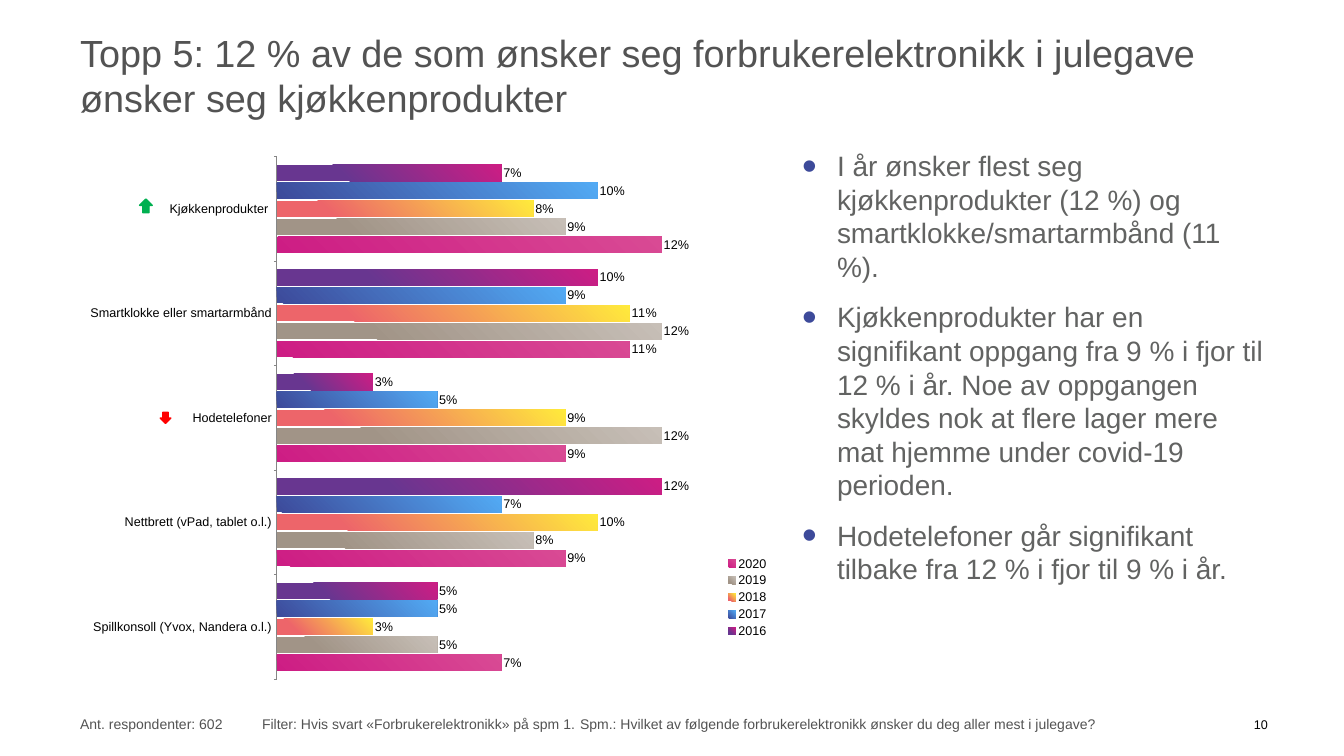
from lxml import etree
from pptx import Presentation
from pptx.chart.data import CategoryChartData
from pptx.dml.color import RGBColor
from pptx.enum.chart import XL_CHART_TYPE as ChartType, XL_LABEL_POSITION as LabelPosition
from pptx.enum.chart import XL_LEGEND_POSITION as LegendPosition, XL_TICK_MARK as TickMark
from pptx.enum.shapes import MSO_SHAPE as Preset
from pptx.enum.text import MSO_ANCHOR as Anchor, PP_ALIGN as Align
from pptx.oxml import parse_xml
from pptx.oxml.ns import nsdecls, qn
from pptx.util import Inches, Pt

GREY, BODY_GREY, BLACK, BLUE = "535353", "626362", "000000", "3D4A9A"
TITLE = ("Topp 5: 12 % av de som ønsker seg forbrukerelektronikk i julegave "
         "ønsker seg kjøkkenprodukter")
POINTS = [
    "I år ønsker flest seg kjøkkenprodukter (12 %) og smartklokke/smartarmbånd (11 %).",
    "Kjøkkenprodukter har en signifikant oppgang fra 9 % i fjor til 12 % i år. Noe av "
    "oppgangen skyldes nok at flere lager mere mat hjemme under covid-19 perioden.",
    "Hodetelefoner går signifikant tilbake fra 12 % i fjor til 9 % i år.",
]
FOOTER = ("Ant. respondenter: 602\tFilter: Hvis svart «Forbrukerelektronikk» på spm 1.\t"
          "Spm.: Hvilket av følgende forbrukerelektronikk ønsker du deg aller mest i julegave?")
CATEGORIES = ["Kjøkkenprodukter ", "Smartklokke eller smartarmbånd", "Hodetelefoner",
              "Nettbrett (vPad, tablet o.l.)", "Spillkonsoll (Yvox, Nandera o.l.)"]
SERIES = {
    "2016": ((0.07, 0.10, 0.03, 0.12, 0.05), ((0, "CD1D84"), (70, "683690"), (100, "683690"))),
    "2017": ((0.10, 0.09, 0.05, 0.07, 0.05), ((0, "52AAF4"), (100, "3D4A9A"))),
    "2018": ((0.08, 0.11, 0.09, 0.10, 0.03), ((0, "FFEA3C"), (79, "ED656A"), (100, "ED656A"))),
    "2019": ((0.09, 0.12, 0.12, 0.08, 0.05), ((0, "C7BFB7"), (75, "A19487"), (100, "A19487"))),
    "2020": ((0.12, 0.11, 0.09, 0.09, 0.07), ((0, "D94A94"), (100, "CD1D84"))),
}


def color(value):
    return RGBColor.from_string(value)


def set_font(font, size, value, name="Arial"):
    for key, setting in {"size": Pt(size), "name": name, "bold": False}.items():
        setattr(font, key, setting)
    font.color.rgb = color(value)


def set_frame(frame, anchor=Anchor.TOP):
    inset = Inches(0.06)
    settings = {"margin_left": inset, "margin_top": inset, "margin_right": inset,
                "margin_bottom": inset, "vertical_anchor": anchor, "word_wrap": True}
    for key, setting in settings.items():
        setattr(frame, key, setting)


def add_box(page, box, anchor=Anchor.TOP):
    frame = page.shapes.add_textbox(*map(Inches, box)).text_frame
    set_frame(frame, anchor)
    return frame


def add_title(page, box):
    title = page.shapes.title
    for key, length in zip(("left", "top", "width", "height"), box):
        setattr(title, key, Inches(length))
    set_frame(title.text_frame, Anchor.MIDDLE)
    para = title.text_frame.paragraphs[0]
    para.text = TITLE
    para.alignment = Align.LEFT
    para.line_spacing = 1.0
    set_font(para.font, 54, GREY)


def add_bullet(para):
    props = para._p.get_or_add_pPr()
    props.set("marL", str(Inches(0.69)))
    props.set("indent", str(-Inches(0.69)))
    bullet_color = etree.SubElement(props, qn("a:buClr"))
    etree.SubElement(bullet_color, qn("a:srgbClr"), val=BLUE)
    etree.SubElement(props, qn("a:buSzPct"), val="150000")
    etree.SubElement(props, qn("a:buFont"), typeface="Arial")
    etree.SubElement(props, qn("a:buChar"), char="•")


def add_points(page, box):
    frame = add_box(page, box)
    for index, text in enumerate(POINTS):
        para = frame.add_paragraph() if index else frame.paragraphs[0]
        para.text = text
        add_bullet(para)
        para.line_spacing = 1.0
        para.space_before = Pt(18 if index else 0)
        para.space_after = Pt(6)
        set_font(para.font, 40, BODY_GREY)


def set_gradient(series, stops):
    marks = "".join(f'<a:gs pos="{position * 1000}"><a:srgbClr val="{value}"/></a:gs>'
                    for position, value in stops)
    series.format.fill.solid()
    props = series.format.fill._xPr
    gradient = parse_xml(
        f'<a:gradFill {nsdecls("a")} rotWithShape="1"><a:gsLst>{marks}</a:gsLst>'
        '<a:path path="circle"><a:fillToRect l="100000" b="100000"/></a:path></a:gradFill>')
    props.replace(props.find(qn("a:solidFill")), gradient)


def set_layout(element, before, box, inner=False):
    for old in element.findall(qn("c:layout")):
        element.remove(old)
    target = '<c:layoutTarget val="inner"/>' if inner else ""
    modes = '<c:xMode val="edge"/><c:yMode val="edge"/>'
    sizes = "".join(f'<c:{key} val="{share}"/>' for key, share in zip("xywh", box))
    layout = parse_xml(f'<c:layout {nsdecls("c")}><c:manualLayout>{target}{modes}{sizes}'
                       '</c:manualLayout></c:layout>')
    element.find(qn(before)).addprevious(layout)


def add_bars(page, box):
    data = CategoryChartData(number_format="0%")
    data.categories = CATEGORIES
    for name, (values, _) in SERIES.items():
        data.add_series(name, values)
    chart = page.shapes.add_chart(ChartType.BAR_CLUSTERED, *map(Inches, box), data).chart
    set_font(chart.font, 18, BLACK)
    chart.has_title = False

    plot = chart.plots[0]
    for key, setting in {"gap_width": 100, "overlap": -10, "vary_by_categories": False,
                         "has_data_labels": True}.items():
        setattr(plot, key, setting)
    for key, setting in {"show_value": True, "number_format": "0%",
                         "number_format_is_linked": False,
                         "position": LabelPosition.OUTSIDE_END}.items():
        setattr(plot.data_labels, key, setting)
    for series in plot.series:
        set_gradient(series, SERIES[series.name][1])

    chart.category_axis.reverse_order = True
    chart.category_axis.major_tick_mark = TickMark.OUTSIDE
    chart.category_axis.format.line.color.rgb = color("868686")
    for key, setting in {"visible": False, "has_major_gridlines": False,
                         "minimum_scale": 0, "maximum_scale": 0.14}.items():
        setattr(chart.value_axis, key, setting)

    chart.has_legend = True
    chart.legend.position = LegendPosition.RIGHT
    chart.legend.include_in_layout = False
    set_layout(chart.legend._element, "c:overlay", (0.9, 0.75, 0.08, 0.16))
    area = chart._chartSpace.chart.plotArea
    set_layout(area, "c:barChart", (0.28, 0.02, 0.63, 0.96), inner=True)


def add_trend(page, box, value, rotation):
    arrow = page.shapes.add_shape(Preset.UP_ARROW, *map(Inches, box))
    arrow.rotation = rotation
    arrow.shadow.inherit = False
    arrow.fill.solid()
    arrow.fill.fore_color.rgb = color(value)
    arrow.line.color.rgb = color(value)
    arrow.line.width = Pt(2)


def add_footer(page, box):
    left, top, width, height = box
    para = add_box(page, box, Anchor.MIDDLE).paragraphs[0]
    para.text = FOOTER
    tabs = etree.SubElement(para._p.get_or_add_pPr(), qn("a:tabLst"))
    for stop in (3.61, 9.92):
        etree.SubElement(tabs, qn("a:tab"), pos=str(Inches(stop)), algn="l")
    set_font(para.font, 20, GREY)

    number = add_box(page, (left + width - 0.57, top + 0.23, 0.8, 0.42))
    para = number.paragraphs[0]
    para.text = "10"
    para.alignment = Align.CENTER
    set_font(para.font, 18, BLACK)


def main():
    deck = Presentation()
    deck.slide_width, deck.slide_height = Inches(26.67), Inches(15)
    page = deck.slides.add_slide(deck.slide_layouts[5])
    add_title(page, (1.53, 0.47, 23.66, 2.04))
    add_bars(page, (1.53, 2.89, 14.15, 10.8))
    add_points(page, (15.86, 2.89, 9.35, 10.79))
    add_footer(page, (1.53, 13.93, 23.66, 0.87))
    add_trend(page, (2.77, 3.95, 0.25, 0.27), "00B050", 0)
    add_trend(page, (3.18, 8.18, 0.21, 0.22), "FF0000", 180)
    deck.save("out.pptx")


if __name__ == "__main__":
    main()
